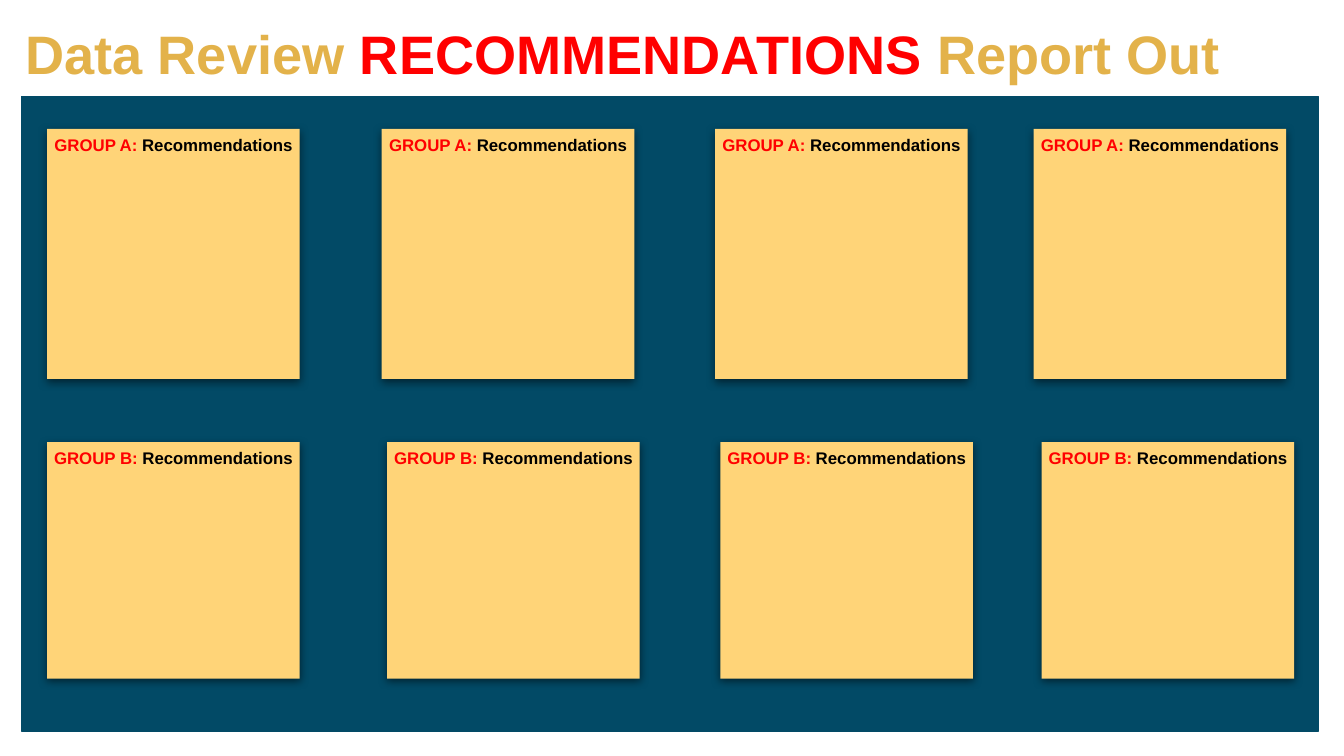
from lxml import etree
from pptx import Presentation
from pptx.dml.color import RGBColor as RGB
from pptx.enum.shapes import MSO_SHAPE as Shape
from pptx.enum.text import MSO_ANCHOR as Anchor, PP_ALIGN as Align
from pptx.oxml.ns import qn
from pptx.util import Inches, Pt

TITLE = [("Data Review ", "gold"), ("RECOMMENDATIONS", "red"),
         (" Report Out", "gold")]
# group label, top, height, left edge of each note
ROWS = [
    ("GROUP A:", 0.96, 1.86, (0.35, 2.84, 5.32, 7.69)),
    ("GROUP B:", 3.29, 1.76, (0.35, 2.88, 5.36, 7.75)),
]
NOTE_W = 1.88
SLIDE_W = 10
SLIDE_H = SLIDE_W * 9 / 16
THEME = {
    "font": "Arial", "title": 29, "note": 9,
    "gold": "E3B24A", "red": "FF0000", "black": "000000",
    "navy": "024A66", "sand": "FFD478",
}


def color(name):
    return RGB.from_string(THEME[name])


def write(frame, runs, size, align, inset, anchor):
    frame.word_wrap = True
    frame.vertical_anchor = anchor
    frame.margin_left = frame.margin_right = Inches(inset)
    frame.margin_top = frame.margin_bottom = Inches(inset)
    para = frame.paragraphs[0]
    para.alignment = align
    for text, tone in runs:
        run = para.add_run()
        run.text = text
        font = run.font
        font.name, font.size, font.bold = THEME["font"], Pt(THEME[size]), True
        font.color.rgb = color(tone)


def add_box(slide, x, y, w, h, fill):
    box = slide.shapes.add_shape(Shape.RECTANGLE, *map(Inches, (x, y, w, h)))
    box.shadow.inherit = False
    box.fill.solid()
    box.fill.fore_color.rgb = color(fill)
    return box


def add_shadow(box):
    """Give the box a soft shadow straight below it."""
    effects = box._element.spPr.find(qn("a:effectLst"))
    outer = etree.SubElement(
        effects, qn("a:outerShdw"), blurRad=str(Pt(4.5)), dist=str(Pt(1.5)),
        dir="5400000", algn="bl", rotWithShape="0")
    tone = etree.SubElement(outer, qn("a:srgbClr"), val=THEME["black"])
    etree.SubElement(tone, qn("a:alpha"), val="49000")


def main():
    deck = Presentation()
    deck.slide_width, deck.slide_height = Inches(SLIDE_W), Inches(SLIDE_H)
    slide = deck.slides.add_slide(deck.slide_layouts[5])

    title = slide.shapes.title
    title.left, title.top = Inches(0.19), Inches(0.06)
    title.width, title.height = Inches(9.62), Inches(0.66)
    write(title.text_frame, TITLE, "title", Align.LEFT, 0, Anchor.MIDDLE)

    panel = add_box(slide, 0.16, 0.72, 9.65, 4.72, "navy")
    panel.line.color.rgb = color("navy")
    panel.line.width = Pt(0.75)

    for label, top, height, lefts in ROWS:
        for left in lefts:
            note = add_box(slide, left, top, NOTE_W, height, "sand")
            note.line.fill.background()
            add_shadow(note)
            runs = [(label, "red"), (" Recommendations", "black")]
            write(note.text_frame, runs, "note", Align.CENTER, 0.04, Anchor.TOP)

    deck.save("out.pptx")


if __name__ == "__main__":
    main()
